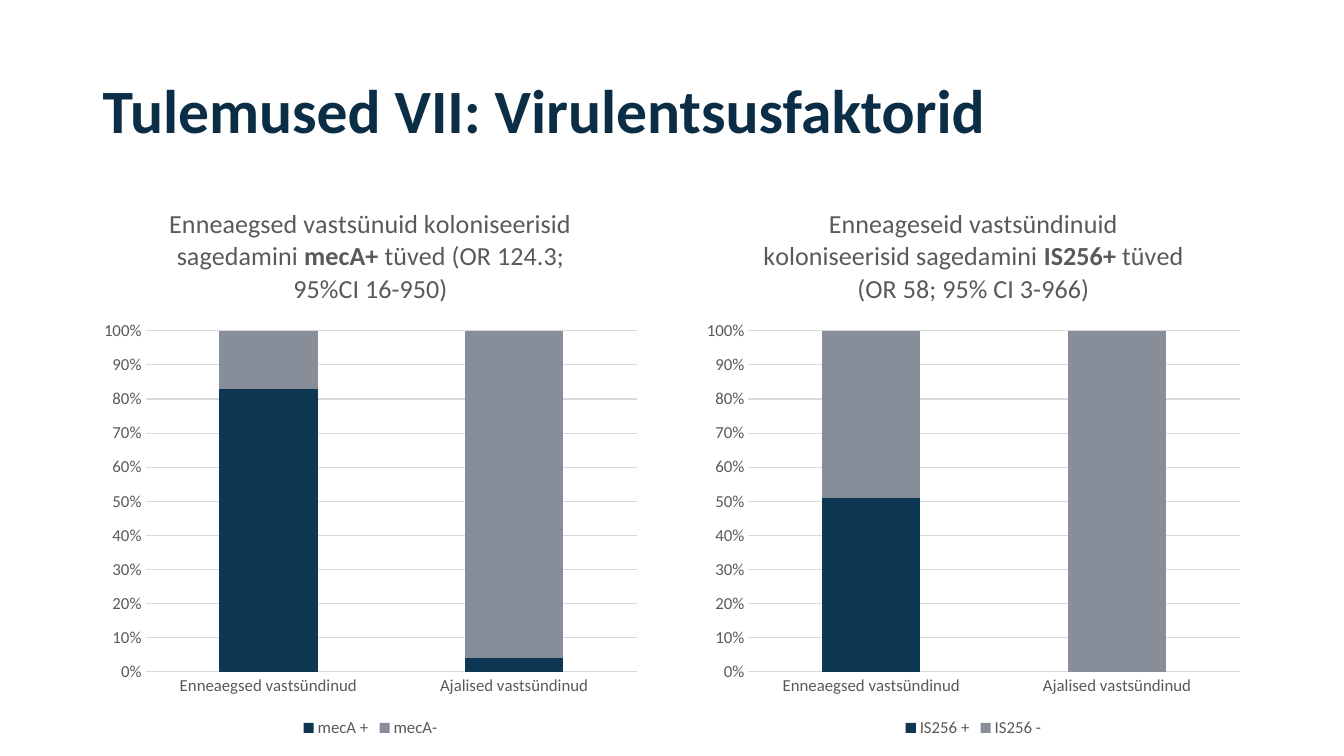
import pptx
import pptx.chart.data
import pptx.dml.color
import pptx.enum.chart
import pptx.enum.text
import pptx.oxml
import pptx.util
from pptx.util import Inches

NAVY, GREY, TEXT, RULE = "0D3753", "878E99", "595959", "D9D9D9"


def color(value):
    return pptx.dml.color.RGBColor.from_string(value)


def style_font(font, size, value, bold=False):
    font.name = "Calibri"
    font.size = pptx.util.Pt(size)
    font.bold = bold
    font.color.rgb = color(value)


deck = pptx.Presentation()
deck.slide_width = Inches(13.33)
deck.slide_height = Inches(7.5)
page = deck.slides.add_slide(deck.slide_layouts[6])

box = page.shapes.add_textbox(Inches(0.92), Inches(0.4), Inches(11.5), Inches(1.45))
box.text_frame.word_wrap = True
box.text_frame.vertical_anchor = pptx.enum.text.MSO_ANCHOR.MIDDLE
para = box.text_frame.paragraphs[0]
para.text = "Tulemused VII: Virulentsusfaktorid"
para.line_spacing = 0.9
style_font(para.font, 44, "0B2E46", True)

charts = [
    (6.9,
     ("Enneageseid vastsündinuid koloniseerisid sagedamini ", "IS256+",
      " tüved (OR 58; 95% CI 3-966)"),
     [("IS256 +", (51, 0), NAVY), ("IS256 -", (49, 100), GREY)]),
    (0.92,
     ("Enneaegsed vastsünuid koloniseerisid sagedamini ", "mecA+",
      " tüved (OR 124.3; 95%CI 16-950)"),
     [("mecA +", (83, 4), NAVY), ("mecA-", (17, 96), GREY)]),
]

for left, title, groups in charts:
    data = pptx.chart.data.CategoryChartData()
    data.categories = ["Enneaegsed vastsündinud", "Ajalised vastsündinud"]
    for name, values, fill in groups:
        data.add_series(name, values)
    chart = page.shapes.add_chart(
        pptx.enum.chart.XL_CHART_TYPE.COLUMN_STACKED_100,
        Inches(left), Inches(1.85), Inches(5.51), Inches(5.51), data).chart
    style_font(chart.font, 12, TEXT)

    para = chart.chart_title.text_frame.paragraphs[0]
    style_font(para.font, 18.6, TEXT)
    for index, words in enumerate(title):
        span = para.add_run()
        span.text = words
        style_font(span.font, 18.6, TEXT, index == 1)
    chart.chart_title.include_in_layout = False

    plot = chart.plots[0]
    plot.gap_width = 150
    plot.overlap = 100
    plot.vary_by_categories = False
    for series, (name, values, fill) in zip(plot.series, groups):
        series.format.fill.solid()
        series.format.fill.fore_color.rgb = color(fill)

    for axis in (chart.category_axis, chart.value_axis):
        axis.major_tick_mark = pptx.enum.chart.XL_TICK_MARK.NONE
        axis.minor_tick_mark = pptx.enum.chart.XL_TICK_MARK.NONE
        style_font(axis.tick_labels.font, 12, TEXT)
    grid = chart.value_axis.major_gridlines
    for line in (chart.category_axis.format.line, grid.format.line):
        line.color.rgb = color(RULE)
        line.width = pptx.util.Pt(0.75)
    chart.value_axis.format.line.fill.background()
    chart.value_axis.tick_labels.number_format = "0%"
    chart.value_axis.tick_labels.number_format_is_linked = False

    chart.has_legend = True
    chart.legend.position = pptx.enum.chart.XL_LEGEND_POSITION.BOTTOM
    chart.legend.include_in_layout = False
    style_font(chart.legend.font, 12, TEXT)

    area = chart.plots[0]._element.getparent()
    for old in area.findall(pptx.oxml.ns.qn("c:layout")):
        area.remove(old)
    area.insert(0, pptx.oxml.parse_xml(
        '<c:layout xmlns:c="http://schemas.openxmlformats.org/drawingml/2006/chart">'
        '<c:manualLayout><c:layoutTarget val="inner"/>'
        '<c:xMode val="edge"/><c:yMode val="edge"/>'
        '<c:x val="0.095"/><c:y val="0.26"/><c:w val="0.885"/><c:h val="0.614"/>'
        '</c:manualLayout></c:layout>'))

deck.save("out.pptx")
